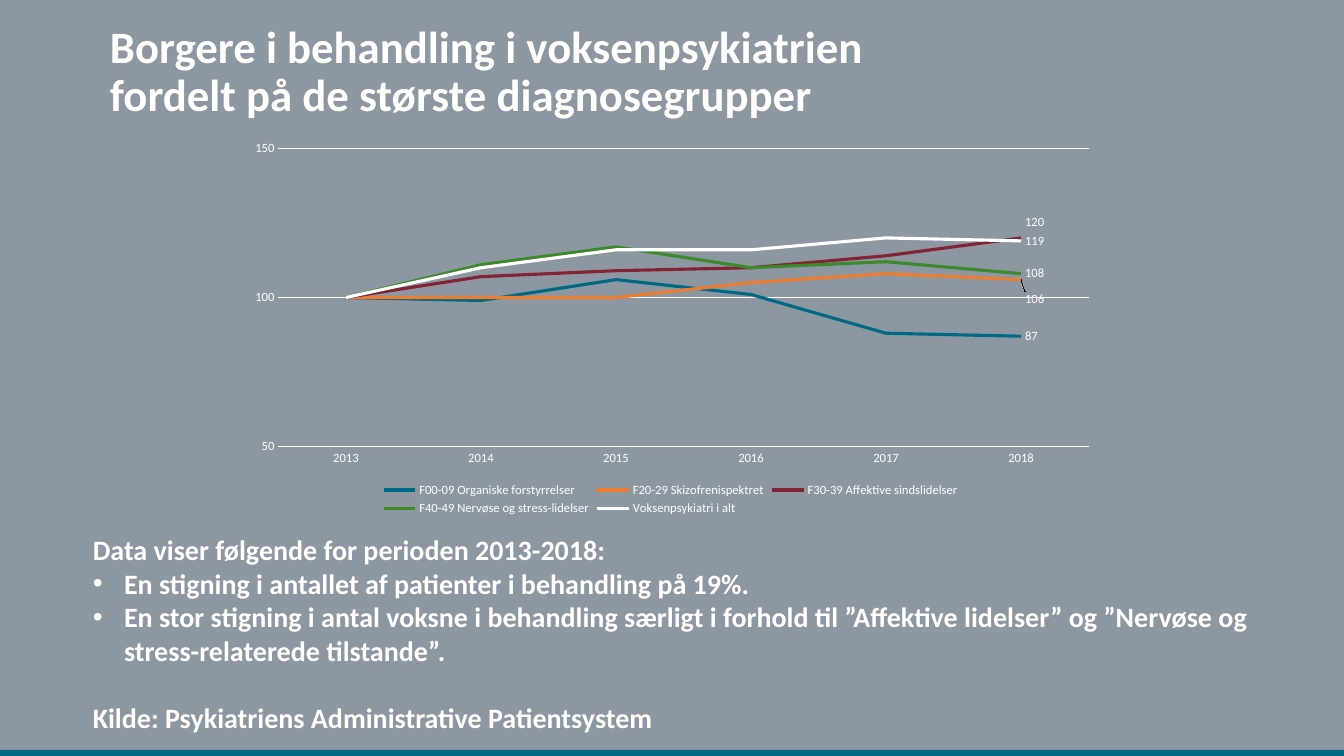
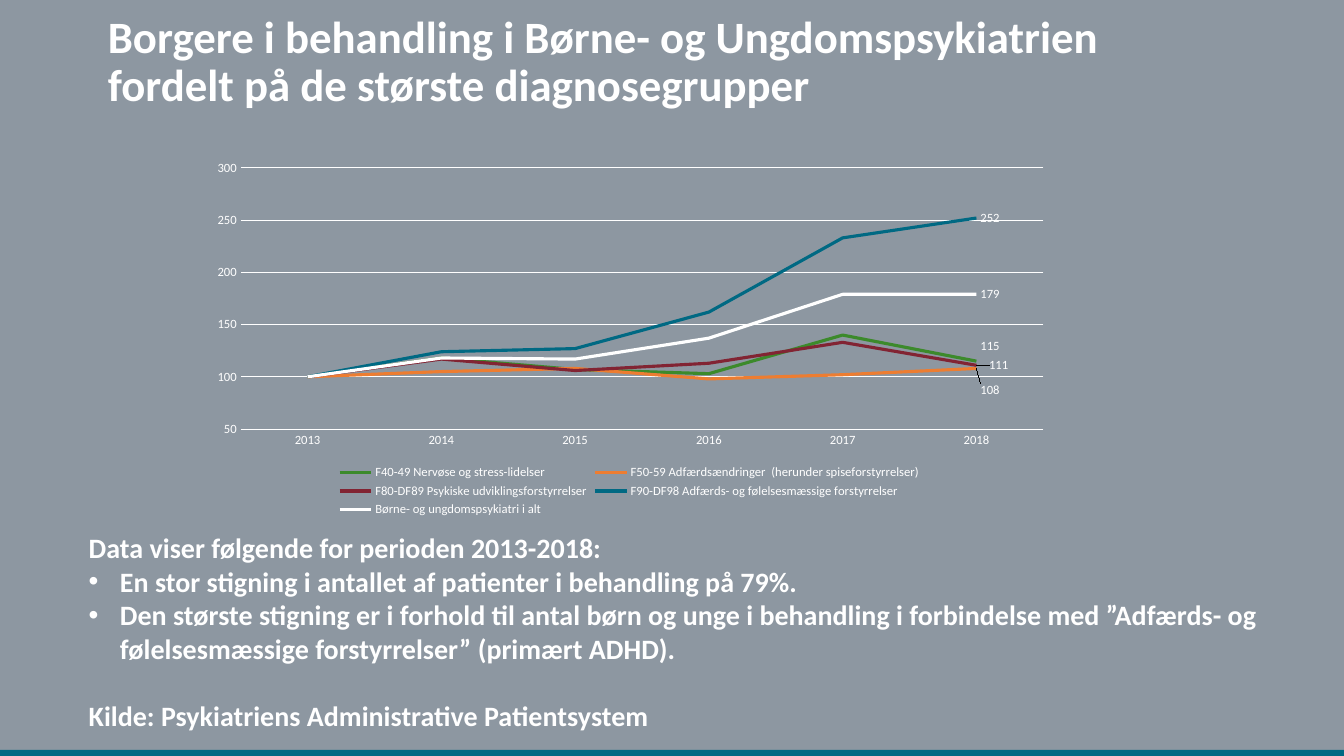
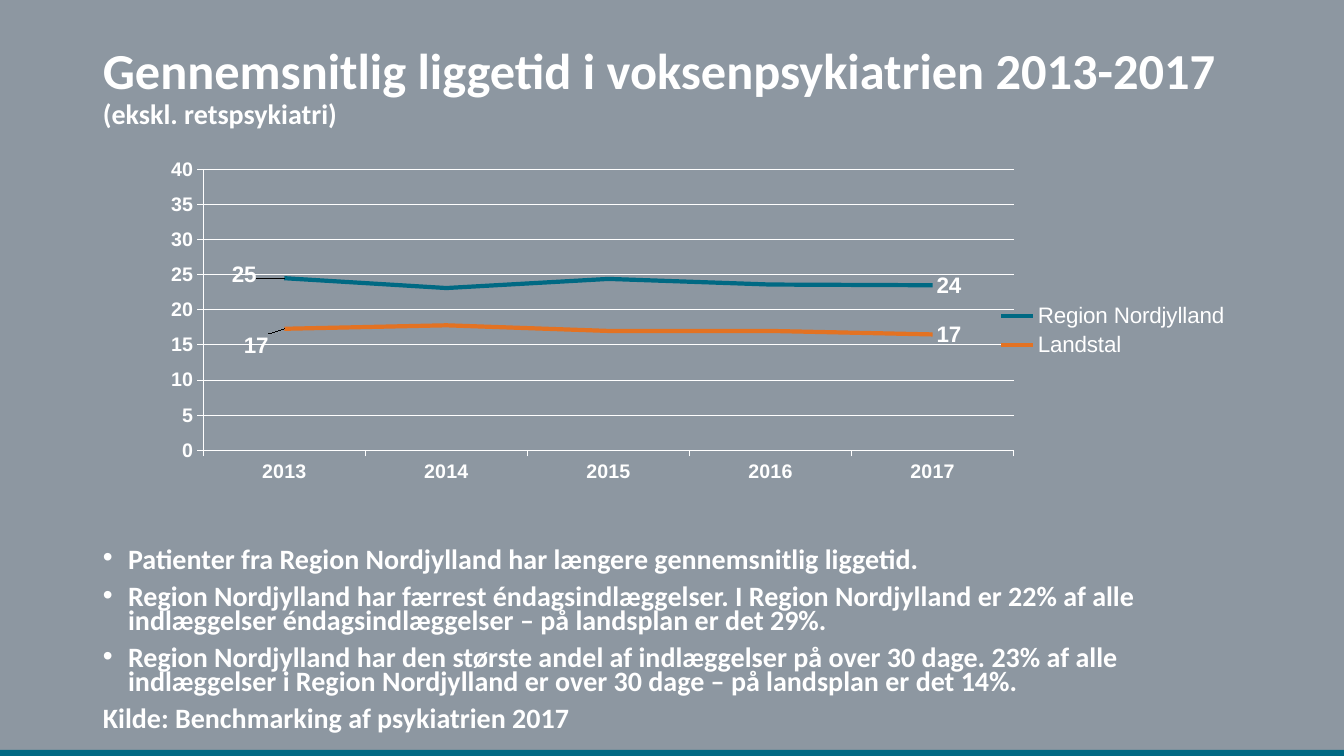
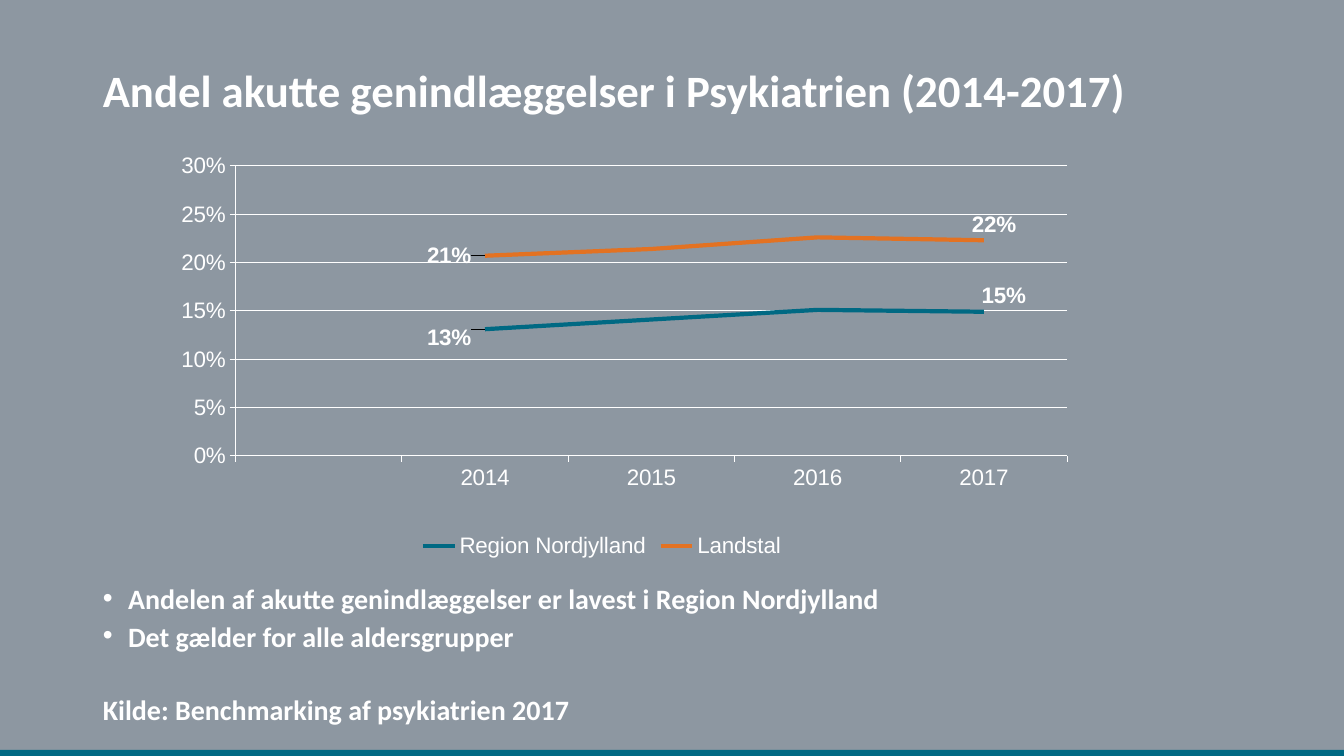
"""Build four slides of psychiatric care trends, each with a title, a line chart and notes."""
from dataclasses import dataclass
from pptx import Presentation
from pptx.chart.data import CategoryChartData
from pptx.dml.color import RGBColor
from pptx.enum.chart import XL_CHART_TYPE, XL_LABEL_POSITION as Spot
from pptx.enum.chart import XL_LEGEND_POSITION as Side, XL_TICK_MARK as Tick
from pptx.enum.shapes import MSO_SHAPE
from pptx.enum.text import MSO_ANCHOR, MSO_AUTO_SIZE, PP_ALIGN
from pptx.oxml import parse_xml
from pptx.oxml.ns import nsdecls
from pptx.util import Inches, Pt


@dataclass(frozen=True)
class Theme:
    white: str = "FFFFFF"
    gray: str = "8D97A1"
    teal: str = "006983"
    orange: str = "ED7D31"
    amber: str = "E37222"
    wine: str = "822433"
    green: str = "3C8A2B"
    text: str = "Calibri"
    plain: str = "Arial"
    head: int = 32
    large: int = 36
    body: int = 20


T = Theme()
WIDE, HIGH, BAND = 13.33, 7.5, 0.06
YEARS = ["2013", "2014", "2015", "2016", "2017", "2018"]
SMALL = dict(font=T.text, size=9, label=9, legend=9, bold=False, axis_bold=False,
             weight=2.25, tick=Tick.NONE, rule=False, format="0", side=Side.BOTTOM)
BIG = dict(font=T.plain, size=16, label=16, legend=16, bold=True, axis_bold=False,
           weight=3, tick=Tick.OUTSIDE, rule=True, format="0%", side=Side.BOTTOM)
LOOSE = dict(anchor=MSO_ANCHOR.MIDDLE, indent=0.31, spacing=1.0, gap=0, last=24)
TIGHT = dict(anchor=MSO_ANCHOR.TOP, indent=0.25, spacing=0.7, gap=10, last=10)
R, L, A = Spot.RIGHT, Spot.LEFT, Spot.ABOVE
PERIOD = "Data viser følgende for perioden 2013-2018:"
SYSTEM = "Kilde: Psykiatriens Administrative Patientsystem"
BENCH = "Kilde: Benchmarking af psykiatrien 2017"

SLIDES = [
    dict(
        title=[("Borgere i behandling i voksenpsykiatrien", T.head),
               ("fordelt på de største diagnosegrupper", T.head)],
        title_box=(0.99, 0, 12.12, 1.45),
        body=[(PERIOD, False),
              ("En stigning i antallet af patienter i behandling på 19%.", True),
              ("En stor stigning i antal voksne i behandling særligt i forhold til "
               "”Affektive lidelser” og ”Nervøse og stress-relaterede tilstande”.", True),
              (SYSTEM, False)],
        body_box=(0.82, 5.24, 11.66, 2.09), flow=LOOSE,
        chart_box=(2.33, 1.32, 8.64, 3.84), plot=(0.05, 0.04, 0.93, 0.77),
        look=SMALL, scale=(50, 150, 50), cats=YEARS,
        lines=[
            ("F00-09 Organiske forstyrrelser", T.teal,
             [100, 99, 106, 101, 88, 87], {5: (R, 0, 0)}),
            ("F20-29 Skizofrenispektret", T.orange,
             [100, 100, 100, 105, 108, 106], {5: (R, 0, 0.05)}),
            ("F30-39 Affektive sindslidelser", T.wine,
             [100, 107, 109, 110, 114, 120], {5: (R, 0, -0.04)}),
            ("F40-49 Nervøse og stress-lidelser", T.green,
             [100, 111, 117, 110, 112, 108], {5: (R, 0, 0)}),
            ("Voksenpsykiatri i alt", T.white,
             [100, 110, 116, 116, 120, 119], {5: (R, 0, 0)})]),
    dict(
        title=[("Borgere i behandling i Børne- og Ungdomspsykiatrien", T.head),
               ("fordelt på de største diagnosegrupper", T.head)],
        title_box=(0.97, 0, 11.5, 1.25),
        body=[(PERIOD, False),
              ("En stor stigning i antallet af patienter i behandling på 79%.", True),
              ("Den største stigning er i forhold til antal børn og unge i behandling i "
               "forbindelse med ”Adfærds- og følelsesmæssige forstyrrelser” "
               "(primært ADHD).", True),
              (SYSTEM, False)],
        body_box=(0.78, 5.26, 11.89, 2.01), flow=LOOSE,
        chart_box=(1.96, 1.52, 8.56, 3.65), plot=(0.05, 0.04, 0.93, 0.71),
        look=SMALL, scale=(50, 300, 50), cats=YEARS,
        lines=[
            ("F40-49 Nervøse og stress-lidelser", T.green,
             [100, 118, 107, 103, 140, 115], {5: (R, 0, -0.04)}),
            ("F50-59 Adfærdsændringer  (herunder spiseforstyrrelser)", T.orange,
             [100, 105, 108, 98, 102, 108], {5: (R, 0, 0.06)}),
            ("F80-DF89 Psykiske udviklingsforstyrrelser", T.wine,
             [100, 117, 106, 113, 133, 111], {5: (R, 0.01, 0)}),
            ("F90-DF98 Adfærds- og følelsesmæssige forstyrrelser", T.teal,
             [100, 124, 127, 162, 233, 252], {5: (R, 0, 0)}),
            ("Børne- og ungdomspsykiatri i alt", T.white,
             [100, 118, 117, 137, 179, 179], {5: (R, 0, 0)})]),
    dict(
        title=[("Gennemsnitlig liggetid i voksenpsykiatrien 2013-2017", T.large),
               ("(ekskl. retspsykiatri)", T.body)],
        title_box=(0.92, 0, 11.5, 1.75),
        body=[("Patienter fra Region Nordjylland har længere gennemsnitlig liggetid.", True),
              ("Region Nordjylland har færrest éndagsindlæggelser. I Region Nordjylland er "
               "22% af alle indlæggelser éndagsindlæggelser – på landsplan er det 29%.", True),
              ("Region Nordjylland har den største andel af indlæggelser på over 30 dage. "
               "23% af alle indlæggelser i Region Nordjylland er over 30 dage – på landsplan "
               "er det 14%.", True),
              (BENCH, False)],
        body_box=(0.92, 5.41, 11.5, 2), flow=TIGHT,
        chart_box=(0.48, 1.57, 11.82, 3.41), plot=(0.13, 0.03, 0.68, 0.82),
        look=BIG | dict(size=14, axis_bold=True, format="0", side=Side.RIGHT),
        scale=(0, 40, 5), cats=YEARS[:5],
        lines=[
            ("Region Nordjylland", T.teal, [24.5, 23.1, 24.4, 23.6, 23.5],
             {0: (L, -0.02, -0.01), 4: (R, 0, 0)}),
            ("Landstal", T.amber, [17.3, 17.8, 17, 17, 16.5],
             {0: (L, -0.01, 0.05), 4: (R, 0, 0)})]),
    dict(
        title=[("Andel akutte genindlæggelser i Psykiatrien (2014-2017)", T.head)],
        title_box=(0.92, 0.3, 11.5, 1.25),
        body=[("Andelen af akutte genindlæggelser er lavest i Region Nordjylland", True),
              ("Det gælder for alle aldersgrupper", True),
              (BENCH, False)],
        body_box=(0.92, 5.81, 11.5, 1.6), flow=TIGHT | dict(last=36),
        chart_box=(1.06, 1.35, 9.82, 4.23), plot=(0.13, 0.07, 0.84, 0.68),
        look=BIG, scale=(0, 0.3, 0.05), cats=["", *YEARS[1:5]],
        lines=[
            ("Region Nordjylland", T.teal, [None, 0.131, 0.141, 0.151, 0.149],
             {1: (L, -0.01, 0.02), 4: (A, 0.02, 0)}),
            ("Landstal", T.amber, [None, 0.207, 0.214, 0.226, 0.223],
             {1: (L, -0.01, 0), 4: (A, 0.01, 0)})]),
]


def put(item, **values):
    for name, value in values.items():
        setattr(item, name, value)


def style(font, name, size, bold):
    put(font, name=name, size=Pt(size), bold=bold)
    font.color.rgb = RGBColor.from_string(T.white)


def draw(line, color, width):
    line.color.rgb = RGBColor.from_string(color)
    line.width = Pt(width)


def place(shape, box):
    put(shape, **dict(zip(("left", "top", "width", "height"), map(Inches, box))))


def frame(shape, box, anchor):
    place(shape, box)
    text = shape.text_frame
    put(text, auto_size=MSO_AUTO_SIZE.NONE, word_wrap=True, vertical_anchor=anchor)
    return text


def lay(parent, index, values, inner=False):
    for old in parent.xpath("./c:layout"):
        parent.remove(old)
    tags = '<c:layoutTarget val="inner"/>' if inner else ""
    if inner:
        tags += '<c:xMode val="edge"/><c:yMode val="edge"/>'
    tags += "".join(f'<c:{key} val="{value}"/>' for key, value in zip("xywh", values))
    parent.insert(index, parse_xml(
        f'<c:layout {nsdecls("c")}><c:manualLayout>{tags}</c:manualLayout></c:layout>'))


def add_title(shape, data):
    para = frame(shape, data["title_box"], MSO_ANCHOR.MIDDLE).paragraphs[0]
    put(para, alignment=PP_ALIGN.LEFT, line_spacing=0.9)
    for row, (words, size) in enumerate(data["title"]):
        if row:
            para.add_line_break()
        run = para.add_run()
        run.text = words
        style(run.font, T.text, size, True)


def add_body(shape, data):
    flow, rows = data["flow"], data["body"]
    text = frame(shape, data["body_box"], flow["anchor"])
    for row, (words, dot) in enumerate(rows):
        para = text.paragraphs[0] if row == 0 else text.add_paragraph()
        gap = 0 if row == 0 else flow["last"] if row == len(rows) - 1 else flow["gap"]
        props = para._p.get_or_add_pPr()
        inset = Inches(flow["indent"]) if dot else 0
        props.set("marL", str(inset))
        props.set("indent", str(-inset))
        mark = '<a:buChar {} char="•"/>' if dot else "<a:buNone {}/>"
        props.append(parse_xml(mark.format(nsdecls("a"))))
        put(para, alignment=PP_ALIGN.LEFT, line_spacing=flow["spacing"],
            space_before=Pt(gap), space_after=Pt(0))
        run = para.add_run()
        run.text = words
        style(run.font, T.text, T.body, True)


def add_graph(slide, data):
    look = data["look"]
    source = CategoryChartData(number_format=look["format"])
    source.categories = data["cats"]
    for name, _, values, _ in data["lines"]:
        source.add_series(name, values)
    chart = slide.shapes.add_chart(
        XL_CHART_TYPE.LINE, *map(Inches, data["chart_box"]), source).chart
    put(chart, has_title=False, has_legend=True)
    style(chart.font, look["font"], look["size"], False)
    put(chart.legend, position=look["side"], include_in_layout=False)
    style(chart.legend.font, look["font"], look["legend"], False)
    chart.plots[0].vary_by_categories = False
    lay(chart.element.xpath(".//c:plotArea")[0], 0, data["plot"], True)

    for axis in (chart.category_axis, chart.value_axis):
        put(axis, major_tick_mark=look["tick"], minor_tick_mark=Tick.NONE)
        style(axis.tick_labels.font, look["font"], look["size"], look["axis_bold"])
        draw(axis.format.line, T.white, 0.75)
    low, high, step = data["scale"]
    put(axis, minimum_scale=low, maximum_scale=high, major_unit=step,
        has_major_gridlines=True)
    put(axis.tick_labels, number_format=look["format"], number_format_is_linked=False)
    draw(axis.major_gridlines.format.line, T.white, 0.75)
    if not look["rule"]:
        axis.format.line.fill.background()

    for order, (line, (_, color, _, marks)) in enumerate(
            zip(chart.plots[0].series, data["lines"]), 1):
        line.smooth = False
        draw(line.format.line, color, look["weight"])
        put(line.data_labels, show_value=False, number_format=look["format"],
            number_format_is_linked=False)
        for index, (spot, *shift) in marks.items():
            label = line.points[index].data_label
            style(label.font, look["font"], look["label"], look["bold"])
            label.position = spot
            if any(shift):
                node = chart.element.xpath(
                    f".//c:ser[{order}]//c:dLbl[c:idx/@val='{index}']")[0]
                lay(node, 1, shift)


def set_master(deck, slide):
    master = deck.slide_master
    fill = master.background.fill
    fill.solid()
    fill.fore_color.rgb = RGBColor.from_string(T.gray)
    band = slide.shapes.add_shape(
        MSO_SHAPE.RECTANGLE, *map(Inches, (0, HIGH - BAND, WIDE, BAND)))
    band.shadow.inherit = False
    band.fill.solid()
    band.fill.fore_color.rgb = RGBColor.from_string(T.teal)
    band.line.fill.background()
    band.element.xpath(".//p:cNvPr")[0].set("id", "99")
    master.shapes.element.append(band.element)


def main():
    deck = Presentation()
    put(deck, slide_width=Inches(WIDE), slide_height=Inches(HIGH))
    for data in SLIDES:
        slide = deck.slides.add_slide(deck.slide_layouts[1])
        add_title(slide.shapes.title, data)
        add_body(slide.placeholders[1], data)
        add_graph(slide, data)
    set_master(deck, slide)
    deck.save("out.pptx")


if __name__ == "__main__":
    main()
